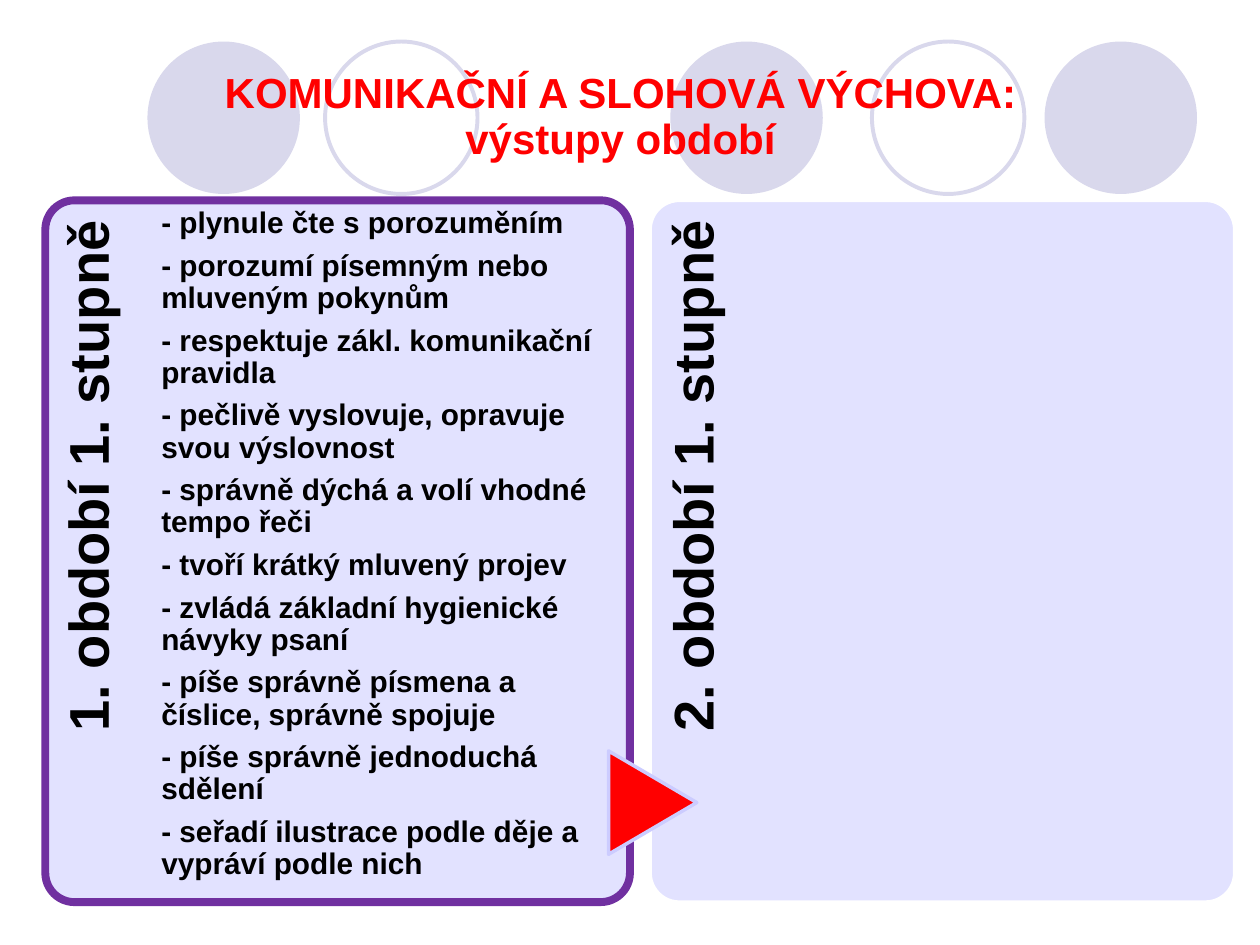
from lxml import etree
from pptx import Presentation
from pptx import util as u
from pptx.dml.color import RGBColor
from pptx.enum import shapes, text
from pptx.oxml.ns import qn

SKILLS = [
    "- plynule čte s porozuměním",
    "- porozumí písemným nebo mluveným pokynům",
    "- respektuje zákl. komunikační pravidla",
    "- pečlivě vyslovuje, opravuje svou výslovnost",
    "- správně dýchá a volí vhodné tempo řeči",
    "- tvoří krátký mluvený projev",
    "- zvládá základní hygienické návyky psaní",
    "- píše správně písmena a číslice, správně spojuje",
    "- píše správně jednoduchá sdělení",
    "- seřadí ilustrace podle děje a vypráví podle nich",
]
CIRCLES = [(1.17, True), (2.58, False), (5.32, True), (6.92, False), (8.29, True)]
PANEL_TOP, PANEL_WIDTH, PANEL_HEIGHT = 1.59, 4.64, 5.57


def colour(value):
    return RGBColor.from_string(value)


def place(item, left, top, width, height):
    item.left, item.top = u.Inches(left), u.Inches(top)
    item.width, item.height = u.Inches(width), u.Inches(height)


def add_figure(page, kind, box, fill=None, line=None, weight=2):
    figure = page.shapes.add_shape(kind, *map(u.Inches, box))
    figure.shadow.inherit = False
    if fill:
        figure.fill.solid()
        figure.fill.fore_color.rgb = colour(fill)
    else:
        figure.fill.background()
    if line:
        figure.line.color.rgb = colour(line)
        figure.line.width = u.Pt(weight)
    else:
        figure.line.fill.background()
    return figure


def set_frame(frame, margins, anchor):
    frame.word_wrap = True
    frame.auto_size = text.MSO_AUTO_SIZE.NONE
    frame.vertical_anchor = anchor
    (frame.margin_left, frame.margin_top,
     frame.margin_right, frame.margin_bottom) = map(u.Inches, margins)


def format_text(frame, size, ink, align, after=0):
    for para in frame.paragraphs:
        para.alignment = align
        para.line_spacing = 0.9
        para.space_before = u.Pt(0)
        para.space_after = u.Pt(after)
        for span in para.runs:
            span.font.name = "Arial"
            span.font.size = u.Pt(size)
            span.font.bold = True
            span.font.color.rgb = colour(ink)


def bring_to_front(page, item):
    page.shapes._spTree.append(item._element)


def add_circles(page, top, size):
    for left, filled in CIRCLES:
        style = {"fill": "D9D8EC"} if filled else {"line": "D9D8EC", "weight": 2.25}
        add_figure(page, shapes.MSO_SHAPE.OVAL, (left, top, size, size), **style)


def add_panel(page, left, label, line, weight):
    box = (left, PANEL_TOP, PANEL_WIDTH, PANEL_HEIGHT)
    panel = add_figure(page, shapes.MSO_SHAPE.ROUNDED_RECTANGLE, box, "E2E2FF", line, weight)
    panel.adjustments[0] = 0.05
    length, depth = 4.57, 0.93
    heading = page.shapes.add_textbox(
        u.Inches(left + (depth - length) / 2), u.Inches(PANEL_TOP + (length - depth) / 2),
        u.Inches(length), u.Inches(depth))
    heading.rotation = 270
    frame = heading.text_frame
    frame.text = label
    set_frame(frame, (0, 0.12, 0.16, 0), text.MSO_ANCHOR.TOP)
    format_text(frame, 32, "000000", text.PP_ALIGN.RIGHT)


def fill_skills(page, body, box):
    place(body, *box)
    frame = body.text_frame
    frame.text = "\n".join(SKILLS)
    set_frame(frame, (0, 0.06, 0, 0), text.MSO_ANCHOR.TOP)
    format_text(frame, 17, "000000", text.PP_ALIGN.LEFT, after=6)
    for para in frame.paragraphs:
        settings = para._p.get_or_add_pPr()
        settings.set("marL", "0")
        settings.set("indent", "0")
        etree.SubElement(settings, qn("a:buNone"))
    bring_to_front(page, body)


def add_arrow(page, box):
    arrow = add_figure(page, shapes.MSO_SHAPE.FLOWCHART_EXTRACT, box, "FF0000", "CCCCFF")
    arrow.rotation = 90


def fill_title(page, title, box):
    place(title, *box)
    frame = title.text_frame
    frame.text = "KOMUNIKAČNÍ A SLOHOVÁ VÝCHOVA: výstupy období"
    set_frame(frame, (0.1, 0.05, 0.1, 0.05), text.MSO_ANCHOR.MIDDLE)
    format_text(frame, 24, "FF0000", text.PP_ALIGN.CENTER)
    bring_to_front(page, title)


def main():
    deck = Presentation()
    deck.slide_width, deck.slide_height = u.Inches(10), u.Inches(7.5)
    page = deck.slides.add_slide(deck.slide_layouts[1])
    title, body = page.placeholders
    add_circles(page, 0.33, 1.21)
    add_panel(page, 0.36, "1. období 1. stupně", "7030A0", 4.5)
    fill_skills(page, body, (1.28, PANEL_TOP, 3.46, PANEL_HEIGHT))
    add_panel(page, 5.16, "2. období 1. stupně", "FFFFFF", 2)
    add_arrow(page, (4.77, 6.02, 0.82, 0.7))
    fill_title(page, title, (1.38, 0.52, 7.09, 0.83))
    deck.save("out.pptx")


if __name__ == "__main__":
    main()
